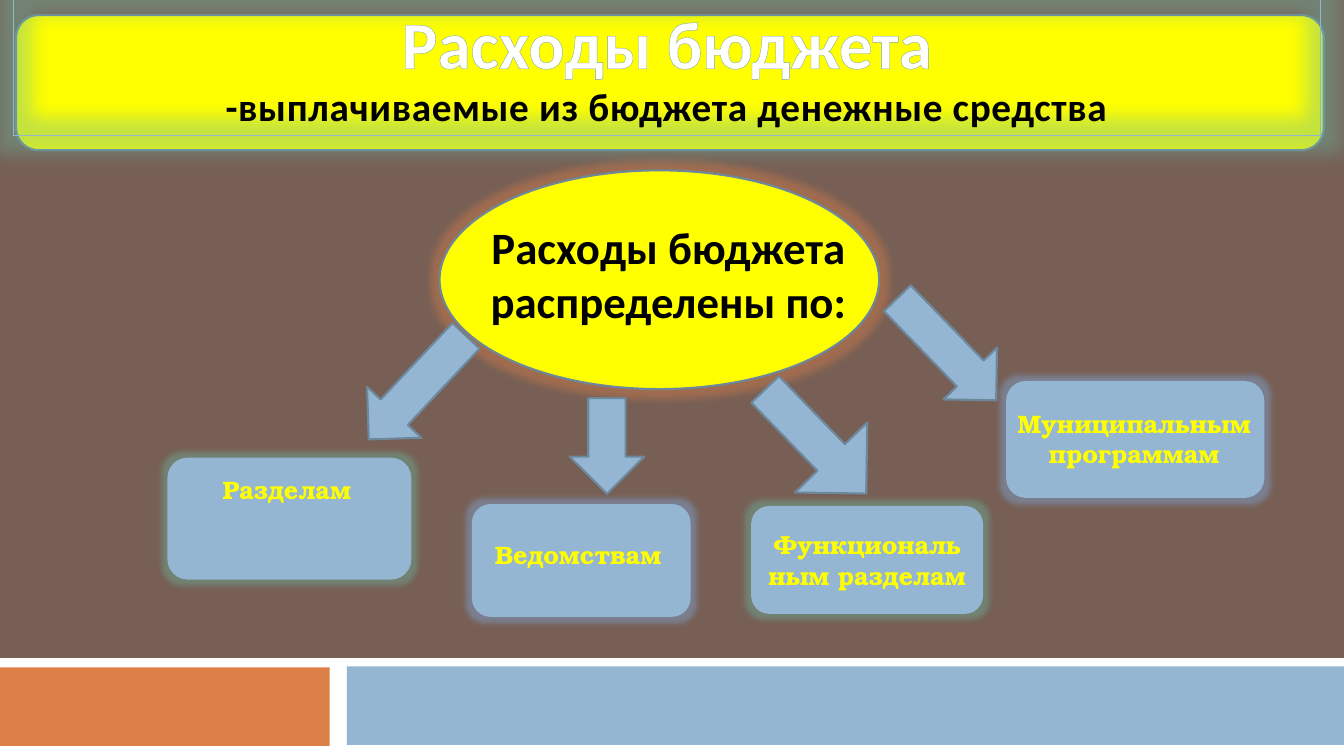
from dataclasses import dataclass
from typing import Optional

import lxml.etree
import pptx
import pptx.dml.color
import pptx.enum.shapes
import pptx.enum.text
import pptx.oxml.ns
import pptx.util

Inches, Pt = pptx.util.Inches, pptx.util.Pt
KIND = pptx.enum.shapes.MSO_SHAPE
ALIGN = pptx.enum.text.PP_ALIGN
ANCHOR = pptx.enum.text.MSO_ANCHOR
FIT = pptx.enum.text.MSO_AUTO_SIZE

BLUE, YELLOW, ORANGE, TEAL = "94B6D2", "FFFF00", "DD8047", "7BA79D"
EDGE, WHITE, BLACK = "6D879B", "FFFFFF", "000000"
HALO, SHEEN = "80B0E8", "6BB9A0"
SANS, SERIF = "Calibri", "TeX Gyre Bonum"

Box = tuple[float, float, float, float]


@dataclass
class Glow:
    color: str
    size: float


@dataclass
class Style:
    size: float
    font: str
    color: str
    rim: Optional[str] = None
    rim_width: float = 0
    gap: float = 0


@dataclass
class Card:
    box: Box
    glow: Glow


@dataclass
class Arrow:
    box: Box
    turn: float = 0
    shaft: float = 0.5


@dataclass
class Label:
    box: Box
    text: str
    align: ALIGN = ALIGN.CENTER


HEAD = Style(48, SANS, WHITE, TEAL, 0.8)
SUB = Style(28, SANS, BLACK, BLUE, 0.75, 0.5)
CORE = Style(32, SANS, BLACK, ORANGE, 1.75)
NAME = Style(18, SERIF, YELLOW)

BARS = [
    ((0, 6.53, 13.33, 0.97), WHITE),
    ((-0.01, 6.62, 3.28, 0.78), ORANGE),
    ((3.44, 6.61, 9.89, 0.78), BLUE),
]
CARDS = [
    Card((1.66, 4.54, 2.42, 1.21), Glow(SHEEN, 8)),
    Card((9.98, 3.78, 2.56, 1.16), Glow(HALO, 8)),
    Card((4.68, 5, 2.17, 1.12), Glow(HALO, 8)),
]
LAST = Card((7.45, 5.02, 2.3, 1.07), Glow(SHEEN, 8))
ARROWS = [
    Arrow((3.77, 3.14, 0.74, 1.41), 43.2),
    Arrow((9.02, 2.76, 0.74, 1.41), 315.9),
    Arrow((5.65, 3.95, 0.74, 0.95)),
    Arrow((7.59, 3.66, 1, 1.44), 315.9, 0.38),
]
LABELS = [
    Label((1.79, 4.66, 2.11, 0.4), "Разделам"),
    Label((4.81, 5.3, 2.05, 0.4), "Ведомствам", ALIGN.LEFT),
    Label((9.97, 4, 2.56, 0.71), "Муниципальным программам"),
]


def rgb(color: str):
    return pptx.dml.color.RGBColor.from_string(color)


def node(parent, tag: str, **attrs: str):
    return lxml.etree.SubElement(parent, pptx.oxml.ns.qn(tag), **attrs)


def shine(shape, glow: Glow) -> None:
    """Put a soft glow into the shape's emptied effect list."""
    shape.shadow.inherit = False
    effects = shape._element.spPr.find(pptx.oxml.ns.qn("a:effectLst"))
    halo = node(effects, "a:glow", rad=str(Pt(glow.size)))
    tint = node(halo, "a:srgbClr", val=glow.color)
    node(tint, "a:alpha", val="40000")


def draw(slide, kind, box: Box, fill: str, line: Optional[str] = None,
         glow: Optional[Glow] = None):
    shape = slide.shapes.add_shape(kind, *map(Inches, box))
    shape.shadow.inherit = False
    shape.fill.solid()
    shape.fill.fore_color.rgb = rgb(fill)
    if line:
        shape.line.color.rgb = rgb(line)
        shape.line.width = Pt(1.5)
    else:
        shape.line.fill.background()
    if glow:
        shine(shape, glow)
    return shape


def write(frame, lines: list[tuple[str, Style]], align=ALIGN.CENTER) -> None:
    for i, (text, style) in enumerate(lines):
        para = frame.paragraphs[0] if i == 0 else frame.add_paragraph()
        para.alignment = align
        run = para.add_run()
        run.text = text
        font = run.font
        font.size, font.name, font.bold = Pt(style.size), style.font, True
        font.color.rgb = rgb(style.color)
        props = run._r.get_or_add_rPr()
        if style.gap:
            props.set("spc", str(int(style.gap * 100)))
        if style.rim:
            rim = node(props, "a:ln", w=str(Pt(style.rim_width)))
            node(node(rim, "a:solidFill"), "a:srgbClr", val=style.rim)
            props.insert(0, rim)


def add_text(slide, box: Box, lines: list[tuple[str, Style]],
             align=ALIGN.CENTER, wrap: bool = True) -> None:
    frame = slide.shapes.add_textbox(*map(Inches, box)).text_frame
    frame.word_wrap = wrap
    frame.auto_size = FIT.SHAPE_TO_FIT_TEXT
    write(frame, lines, align)


def add_title(slide) -> None:
    title = slide.shapes.title
    slide.shapes._spTree.append(title._element)
    title.left, title.top, title.width, title.height = map(
        Inches, (0.13, -0.04, 12.97, 1.38))
    title.line.color.rgb = rgb(BLUE)
    title.line.width = Pt(0.75)
    shine(title, Glow(SHEEN, 25))
    frame = title.text_frame
    frame.auto_size = FIT.SHAPE_TO_FIT_TEXT
    frame.vertical_anchor = ANCHOR.MIDDLE
    write(frame, [("Расходы бюджета", HEAD),
                  ("-выплачиваемые из бюджета денежные средства", SUB)])


def add_card(slide, card: Card):
    return draw(slide, KIND.FLOWCHART_ALTERNATE_PROCESS, card.box, BLUE,
                glow=card.glow)


def add_arrow(slide, arrow: Arrow) -> None:
    shape = draw(slide, KIND.DOWN_ARROW, arrow.box, BLUE, EDGE)
    shape.rotation = arrow.turn
    shape.adjustments[0] = arrow.shaft


def main() -> None:
    deck = pptx.Presentation()
    deck.slide_width, deck.slide_height = Inches(13.33), Inches(7.5)
    slide = deck.slides.add_slide(deck.slide_layouts[5])
    slide.background.fill.solid()
    slide.background.fill.fore_color.rgb = rgb("775F55")

    for box, color in BARS:
        draw(slide, KIND.RECTANGLE, box, color)
    draw(slide, KIND.OVAL, (4.36, 1.69, 4.36, 2.17), YELLOW, EDGE,
         Glow(ORANGE, 11))
    draw(slide, KIND.ROUNDED_RECTANGLE, (0.16, 0.15, 12.97, 1.34), YELLOW, EDGE)
    add_title(slide)
    add_text(slide, (4.49, 2.13, 4.28, 1.18),
             [("Расходы бюджета", CORE), ("распределены по:", CORE)], wrap=False)
    for card in CARDS:
        add_card(slide, card)
    for arrow in ARROWS:
        add_arrow(slide, arrow)
    for label in LABELS:
        add_text(slide, label.box, [(label.text, NAME)], label.align)
    frame = add_card(slide, LAST).text_frame
    frame.vertical_anchor = ANCHOR.MIDDLE
    write(frame, [("Функциональным разделам", NAME)])
    deck.save("out.pptx")


if __name__ == "__main__":
    main()
